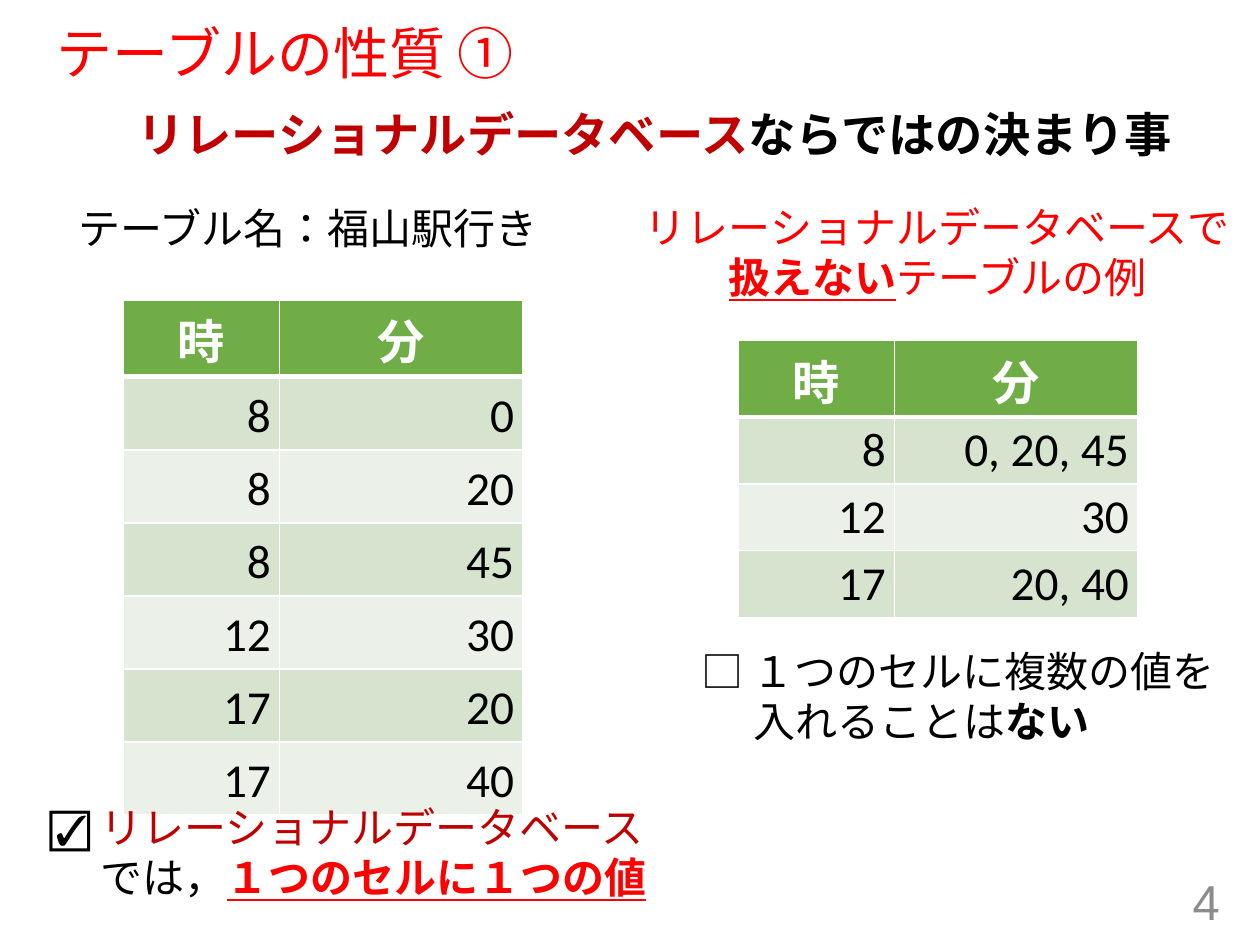
import lxml.etree
import pptx
import pptx.dml.color
import pptx.enum.lang
import pptx.enum.text
import pptx.oxml.ns
import pptx.util

COLORS = {
    "red": "FF0000",
    "crimson": "C00000",
    "black": "000000",
    "white": "FFFFFF",
    "gray": "8C8C8C",
    "header": "70AD47",
    "odd": "D5E3CF",
    "even": "EBF1E9",
}
ALIGN = pptx.enum.text.PP_ALIGN
ANCHOR = pptx.enum.text.MSO_ANCHOR
JAPANESE = pptx.enum.lang.MSO_LANGUAGE_ID.JAPANESE
COLUMNS, ROWS = 100, 75

deck = pptx.Presentation()
deck.slide_width = pptx.util.Inches(10)
deck.slide_height = pptx.util.Inches(7.5)
slide = deck.slides.add_slide(deck.slide_layouts[6])


def across(columns):
    return round(deck.slide_width * columns / COLUMNS)


def down(rows):
    return round(deck.slide_height * rows / ROWS)


def within(region, col, row, width, height):
    return region[0] + col, region[1] + row, width, height


def color(name):
    return pptx.dml.color.RGBColor.from_string(COLORS[name])


def inset(holder):
    holder.margin_left = holder.margin_right = across(0.7)
    holder.margin_top = holder.margin_bottom = down(0.4)


def rule_below(cell, points):
    qn = pptx.oxml.ns.qn
    border = lxml.etree.Element(qn("a:lnB"), w=str(pptx.util.Pt(points)))
    fill = lxml.etree.SubElement(border, qn("a:solidFill"))
    lxml.etree.SubElement(fill, qn("a:srgbClr"), val=COLORS["white"])
    cell._tc.get_or_add_tcPr().insert(0, border)


def write(frame, lines, size=24, font="Arial", tint="black", bold=False,
          align=ALIGN.LEFT, spacing=None, hang=0):
    for index, line in enumerate(lines):
        paragraph = frame.add_paragraph() if index else frame.paragraphs[0]
        paragraph.alignment = align
        if spacing:
            paragraph.line_spacing = spacing
        if index and hang:
            paragraph._p.get_or_add_pPr().set("marL", str(across(hang)))
        for text, changes in line:
            style = {"tint": tint, "bold": bold, "underline": False, **changes}
            run = paragraph.add_run()
            run.text = text
            run.font.language_id = JAPANESE
            run.font.name = font
            run.font.size = pptx.util.Pt(size)
            run.font.bold = style["bold"]
            run.font.underline = style["underline"]
            run.font.color.rgb = color(style["tint"])


def text_box(box, lines, anchor=ANCHOR.TOP, tight=False, **style):
    col, row, width, height = box
    frame = slide.shapes.add_textbox(
        across(col), down(row), across(width), down(height)).text_frame
    frame.word_wrap = True
    frame.vertical_anchor = anchor
    if tight:
        inset(frame)
    write(frame, lines, **style)


def timetable(box, records, spacing=None):
    col, row, width, height = box
    header_height = 6.1
    entries = [("時", "分")] + records
    table = slide.shapes.add_table(
        len(entries), 2, across(col), down(row), across(width), down(height)).table
    table.columns[0].width = across(12.4)
    table.columns[1].width = across(width - 12.4)
    for r, entry in enumerate(entries):
        record_height = (height - header_height) / len(records)
        table.rows[r].height = down(record_height if r else header_height)
        band = ("odd" if r % 2 else "even") if r else "header"
        for c, value in enumerate(entry):
            cell = table.cell(r, c)
            inset(cell)
            cell.fill.solid()
            cell.fill.fore_color.rgb = color(band)
            if not r:
                rule_below(cell, 3)
            write(cell.text_frame, [[(value, {})]], size=27, font="Calibri",
                  tint="black" if r else "white", bold=not r,
                  align=ALIGN.RIGHT if r else ALIGN.CENTER,
                  spacing=spacing if r else None)


def heading(region):
    text_box(within(region, 3.5, 1.9, 92.5, 5.1), [[("テーブルの性質 ①", {})]],
             size=32, tint="red", spacing=0.9, anchor=ANCHOR.MIDDLE)
    text_box(within(region, 10.2, 8.5, 84.8, 5.7),
             [[("リレーショナルデータベース", {"tint": "crimson"}),
               ("ならではの決まり事", {})]],
             size=27, bold=True, spacing=0.9, tight=True)


def valid_example(region):
    text_box(within(region, 5.5, 1.1, 43.7, 5.7),
             [[("テーブル名：福山駅行き", {})]], spacing=0.9, tight=True)
    timetable(within(region, 9.8, 8.8, 31.7, 40.5),
              [("8", "0"), ("8", "20"), ("8", "45"),
               ("12", "30"), ("17", "20"), ("17", "40")],
              spacing=pptx.util.Pt(36))
    text_box(within(region, 2.9, 48.1, 54.6, 8.1),
             [[("☑ ", {}), ("リレーショナルデータベース", {"tint": "crimson"})],
              [("では，", {}),
               ("１つのセルに１つの値",
                {"tint": "red", "bold": True, "underline": True})]],
             hang=4.1)


def invalid_example(region):
    text_box(within(region, -0.6, 0.5, 50, 8.1),
             [[("リレーショナルデータベースで", {})],
              [("扱えない", {"bold": True, "underline": True}),
               ("テーブルの例", {})]],
             tint="red", align=ALIGN.CENTER)
    timetable(within(region, 8.6, 12, 31.7, 22),
              [("8", "0, 20, 45"), ("12", "30"), ("17", "20, 40")])
    text_box(within(region, 4.7, 35.7, 45, 8.1),
             [[("□ １つのセルに複数の値を", {})],
              [("入れることは", {}), ("ない", {"bold": True})]],
             hang=4.1)


def page_number(region):
    text_box(region, [[("4", {})]], size=28, tint="gray",
             align=ALIGN.RIGHT, anchor=ANCHOR.MIDDLE)


heading((0, 0, COLUMNS, 15))
valid_example((0, 15, COLUMNS / 2, 60))
invalid_example((COLUMNS / 2, 15, COLUMNS / 2, 60))
page_number((75.3, 69.5, 22.5, 4))
deck.save("out.pptx")
